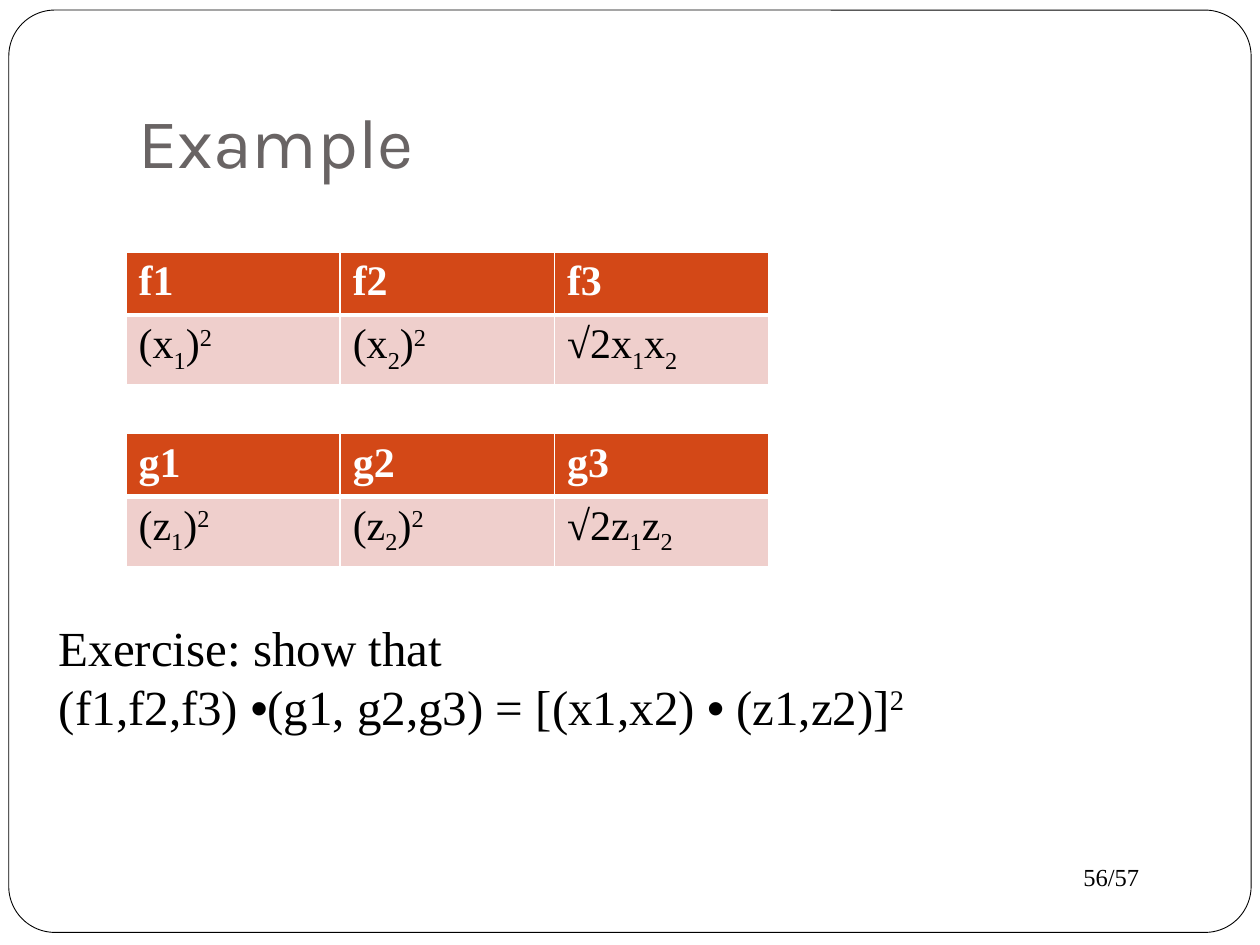
from lxml.etree import SubElement
from pptx import Presentation
from pptx.dml.color import RGBColor as Color
from pptx.enum.shapes import MSO_SHAPE as Shape
from pptx.enum.text import MSO_ANCHOR as Anchor
from pptx.oxml.ns import qn
from pptx.util import Inches, Pt

COLORS = {"white": "FFFFFF", "black": "000000", "title": "696464",
          "header": "D34817", "body": "EFCFCC"}
SERIF = "Times New Roman"
SUBSCRIPT, SUPERSCRIPT = -25, 30

FORMATS = {
    "title": {"name": "Karla", "size": Pt(40), "color": "title"},
    "number": {"name": SERIF, "size": Pt(14), "color": "black"},
    "header": {"name": SERIF, "size": Pt(24), "color": "white", "bold": True},
    "body": {"name": SERIF, "size": Pt(24), "color": "black", "bold": False},
    "exercise": {"name": SERIF, "size": Pt(28), "color": "black"},
    "dot": {"name": "Arial", "size": Pt(28), "color": "black"},
}

TEXTS = [
    ((8.5, 6.79, 1, 0.34), Anchor.TOP, 0.05, [("56/57", "number", 0)]),
    ((1, 0.3, 8.5, 1.25), Anchor.BOTTOM, 0.1, [("Example", "title", 0)]),
    ((0.37, 4.85, 9.13, 1.04), Anchor.TOP, 0.05, [
        ("Exercise: show that ", "exercise", 0),
        None,
        ("(f1,f2,f3) ", "exercise", 0),
        ("•", "dot", 0),
        ("(g1, g2,g3) = [(x1,x2) ", "exercise", 0),
        ("•", "dot", 0),
        (" (z1,z2)]", "exercise", 0),
        ("2", "exercise", SUPERSCRIPT),
    ]),
]

FEATURE_TABLES = [
    {"feature": "f", "variable": "x", "top": 2, "rows": (0.47, 0.52)},
    {"feature": "g", "variable": "z", "top": 3.44, "rows": (0.49, 0.55)},
]
TABLE_LEFT, COLUMN_WIDTH = 1, 1.7


def color(name):
    return Color.from_string(COLORS[name])


def add_runs(paragraph, runs):
    for item in runs:
        if item is None:
            paragraph.add_line_break()
            continue
        text, style, baseline = item
        run = paragraph.add_run()
        run.text = text
        for attribute, value in FORMATS[style].items():
            if attribute == "color":
                run.font.color.rgb = color(value)
            else:
                setattr(run.font, attribute, value)
        if baseline:
            run.font._element.set("baseline", str(baseline * 1000))


def add_text(slide, box, anchor, bottom, runs):
    frame = slide.shapes.add_textbox(*map(Inches, box)).text_frame
    settings = {"word_wrap": True, "vertical_anchor": anchor,
                "margin_bottom": Inches(bottom)}
    for attribute, value in settings.items():
        setattr(frame, attribute, value)
    add_runs(frame.paragraphs[0], runs)


def set_borders(cell, bottom):
    properties = cell._tc.get_or_add_tcPr()
    widths = {"lnL": 1, "lnR": 1, "lnT": 1, "lnB": bottom}
    for index, (side, width) in enumerate(widths.items()):
        line = SubElement(properties, qn(f"a:{side}"), w=str(Pt(width)))
        fill = SubElement(line, qn("a:solidFill"))
        SubElement(fill, qn("a:srgbClr"), val=COLORS["white"])
        properties.insert(index, line)


def feature_rows(feature, variable):
    header = [[(f"{feature}{index}", "header", 0)] for index in (1, 2, 3)]
    squares = [[(f"({variable}", "body", 0), (index, "body", SUBSCRIPT),
                (")", "body", 0), ("2", "body", SUPERSCRIPT)] for index in "12"]
    product = [(f"√2{variable}", "body", 0), ("1", "body", SUBSCRIPT),
               (variable, "body", 0), ("2", "body", SUBSCRIPT)]
    return [header, squares + [product]]


def add_feature_table(slide, feature, variable, top, rows):
    contents = feature_rows(feature, variable)
    count = len(contents[0])
    table = slide.shapes.add_table(
        len(rows), count, Inches(TABLE_LEFT), Inches(top),
        Inches(COLUMN_WIDTH * count), Inches(sum(rows))).table
    for column in table.columns:
        column.width = Inches(COLUMN_WIDTH)
    styles = (("header", 3), ("body", 1))
    for row, height, cells, (fill, bottom) in zip(table.rows, rows, contents, styles):
        row.height = Inches(height)
        for cell, runs in zip(row.cells, cells):
            cell.fill.solid()
            cell.fill.fore_color.rgb = color(fill)
            set_borders(cell, bottom)
            add_runs(cell.text_frame.paragraphs[0], runs)


def add_frame(slide):
    frame = slide.shapes.add_shape(
        Shape.ROUNDED_RECTANGLE, *map(Inches, (0.07, 0.08, 9.86, 7.32)))
    frame.adjustments[0] = 0.05
    frame.shadow.inherit = False
    frame.fill.solid()
    frame.fill.fore_color.rgb = color("white")
    frame.line.color.rgb = color("black")
    frame.line.width = Pt(0.5)


def main():
    presentation = Presentation()
    presentation.slide_width, presentation.slide_height = Inches(10), Inches(7.5)
    slide = presentation.slides.add_slide(presentation.slide_layouts[6])
    add_frame(slide)
    for text in TEXTS:
        add_text(slide, *text)
    for table in FEATURE_TABLES:
        add_feature_table(slide, **table)
    presentation.save("out.pptx")


if __name__ == "__main__":
    main()
